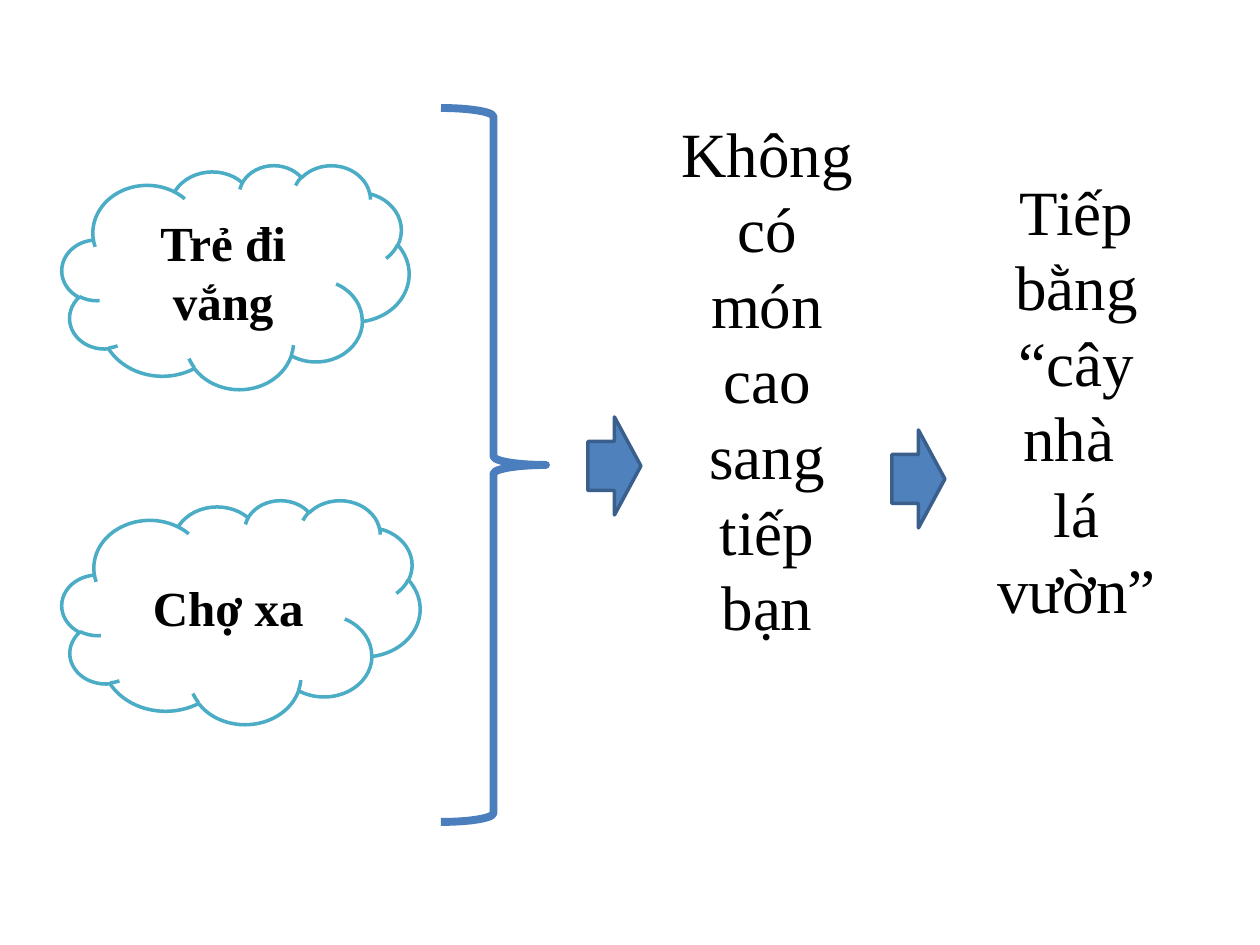
from pptx import Presentation
from pptx.dml.color import RGBColor
from pptx.enum.shapes import MSO_SHAPE
from pptx.enum.text import MSO_ANCHOR, MSO_AUTO_SIZE, PP_ALIGN
from pptx.util import Emu, Pt

CLOUD = MSO_SHAPE.CLOUD
BRACE = MSO_SHAPE.RIGHT_BRACE
ARROW = MSO_SHAPE.RIGHT_ARROW
MIDDLE = MSO_ANCHOR.MIDDLE
GROW = MSO_AUTO_SIZE.SHAPE_TO_FIT_TEXT
CENTER = PP_ALIGN.CENTER

PX = 914400 // 126
FONT = "Times New Roman"

CAUSES = [
    ("Trẻ đi vắng", (62, 165, 347, 224)),
    ("Chợ xa", (62, 500, 358, 224)),
]
BRACE_BOX = (441, 108, 105, 714)
RESULTS = [
    (["Không có món cao sang tiếp bạn"], (662, 108, 210, 547)),
    (["Tiếp bằng “cây nhà ", "lá vườn”"], (977, 166, 199, 471)),
]
ARROW_BOXES = [(588, 417, 53, 98), (892, 430, 53, 98)]


def color(value):
    return RGBColor.from_string(value)


def scaled(box):
    return [Emu(length * PX) for length in box]


def add_outlined(slide, preset, box, outline, width, fill=None):
    shape = slide.shapes.add_shape(preset, *scaled(box))
    shape.shadow.inherit = False
    if fill:
        shape.fill.solid()
        shape.fill.fore_color.rgb = color(fill)
    else:
        shape.fill.background()
    shape.line.color.rgb = color(outline)
    shape.line.width = Pt(width)
    return shape


def write(frame, lines, size, bold=False):
    frame.word_wrap = True
    frame.text = "\n".join(lines)
    for paragraph in frame.paragraphs:
        paragraph.alignment = CENTER
        for run in paragraph.runs:
            run.font.name = FONT
            run.font.size = Pt(size)
            run.font.bold = bold
            run.font.color.rgb = color("000000")


def main():
    deck = Presentation()
    deck.slide_width, deck.slide_height = scaled((1260, 945))
    slide = deck.slides.add_slide(deck.slide_layouts[6])

    for cause, box in CAUSES:
        cloud = add_outlined(slide, CLOUD, box, "4BACC6", 2, "FFFFFF")
        cloud.text_frame.vertical_anchor = MIDDLE
        write(cloud.text_frame, [cause], 28, bold=True)

    add_outlined(slide, BRACE, BRACE_BOX, "4B7EBC", 4.5)

    for (lines, text_box), arrow_box in zip(RESULTS, ARROW_BOXES):
        result = slide.shapes.add_textbox(*scaled(text_box))
        write(result.text_frame, lines, 36)
        result.text_frame.auto_size = GROW
        add_outlined(slide, ARROW, arrow_box, "3A5F8C", 2, "4F81BD")

    deck.save("out.pptx")


if __name__ == "__main__":
    main()
